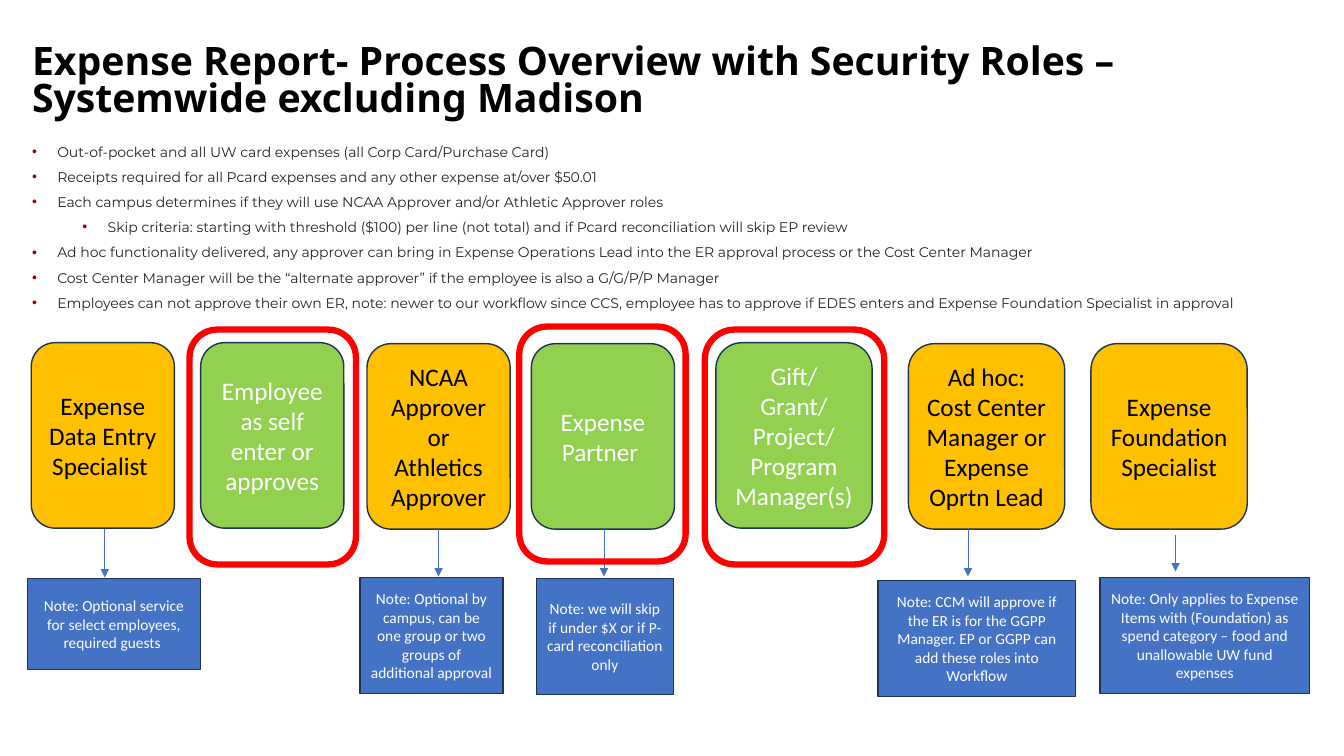
from lxml import etree
from pptx import Presentation
from pptx.dml.color import RGBColor
from pptx.enum.shapes import MSO_CONNECTOR, MSO_SHAPE
from pptx.enum.text import MSO_ANCHOR, PP_ALIGN
from pptx.oxml.ns import qn
from pptx.util import Pt

PX = 9144  # 100 px to the inch
ROUNDED, RECT = MSO_SHAPE.ROUNDED_RECTANGLE, MSO_SHAPE.RECTANGLE
STRAIGHT = MSO_CONNECTOR.STRAIGHT
CENTER, LEFT = PP_ALIGN.CENTER, PP_ALIGN.LEFT
MIDDLE, TOP = MSO_ANCHOR.MIDDLE, MSO_ANCHOR.TOP
AMBER, GREEN, BLUE, NAVY = "FFC000", "92D050", "4472C4", "1E3256"
BLACK, WHITE, RED = "000000", "FFFFFF", "FF0000"

prs = Presentation()
prs.slide_width, prs.slide_height = 1333 * PX, 750 * PX
slide = prs.slides.add_slide(prs.slide_layouts[6])


def color(hex_code):
    return RGBColor.from_string(hex_code)


def write(shape, lines, *, size, font="Calibri", ink=BLACK, bold=False,
          align=CENTER, anchor=MIDDLE, spacing=None, before=0, bullet=None):
    """Fill a shape with (level, text) lines; levels set the bullet indent."""
    frame = shape.text_frame
    frame.word_wrap = True
    frame.vertical_anchor = anchor
    for number, (level, text) in enumerate(lines):
        paragraph = frame.add_paragraph() if number else frame.paragraphs[0]
        paragraph.text = text
        paragraph.alignment = align
        paragraph.level = level
        if spacing:
            paragraph.line_spacing = spacing
        if before and number:
            paragraph.space_before = Pt(before)
        if bullet:
            props = paragraph._p.get_or_add_pPr()
            props.set("marL", str((25 + 50 * level) * PX))
            props.set("indent", str(-25 * PX))
            tint = etree.SubElement(props, qn("a:buClr"))
            etree.SubElement(tint, qn("a:srgbClr"), val=bullet)
            etree.SubElement(props, qn("a:buFont"), typeface="Arial")
            etree.SubElement(props, qn("a:buChar"), char="•")
        for run in paragraph.runs:
            run.font.size, run.font.name, run.font.bold = Pt(size), font, bold
            run.font.color.rgb = color(ink)


def add_box(kind, left, top, width, height, fill, line, weight):
    box = slide.shapes.add_shape(kind, left * PX, top * PX, width * PX, height * PX)
    box.shadow.inherit = False
    if fill:
        box.fill.solid()
        box.fill.fore_color.rgb = color(fill)
    else:
        box.fill.background()
    box.line.color.rgb = color(line)
    box.line.width = Pt(weight)
    return box


# Policy bullets
policies = [
    (0, "Out-of-pocket and all UW card expenses (all Corp Card/Purchase Card)"),
    (0, "Receipts required for all Pcard expenses and any other expense at/over $50.01"),
    (0, "Each campus determines if they will use NCAA Approver and/or Athletic Approver roles"),
    (1, "Skip criteria: starting with threshold ($100) per line (not total) and if Pcard "
        "reconciliation will skip EP review"),
    (0, "Ad hoc functionality delivered, any approver can bring in Expense Operations Lead "
        "into the ER approval process or the Cost Center Manager"),
    (0, "Cost Center Manager will be the “alternate approver” if the employee is also a "
        "G/G/P/P Manager"),
    (0, "Employees can not approve their own ER, note: newer to our workflow since CCS, "
        "employee has to approve if EDES enters and Expense Foundation Specialist in approval"),
]
policy_box = slide.shapes.add_textbox(22 * PX, 137 * PX, 1244 * PX, 483 * PX)
write(policy_box, policies, size=10, font="Montserrat", ink="212529",
      align=LEFT, anchor=TOP, before=6, bullet="990000")

# Title
title = slide.shapes.add_textbox(22 * PX, 41 * PX, 1264 * PX, 83 * PX)
write(title, [(0, "Expense Report- Process Overview with Security Roles – "
                  "Systemwide excluding Madison")],
      size=28, font="Noto Sans", bold=True, align=LEFT, spacing=0.79)

# Approval roles: left, top, width, fill, text colour, lines
roles = [
    (31, 340, 142, AMBER, BLACK, ["Expense Data Entry Specialist "]),
    (199, 340, 142, GREEN, WHITE, ["Employee as self enter or approves"]),
    (364, 341, 142, AMBER, BLACK, ["NCAA Approver or Athletics Approver"]),
    (527, 341, 142, GREEN, WHITE, ["Expense Partner "]),
    (710, 340, 155, GREEN, WHITE, ["Gift/\vGrant/Project/ Program Manager(s)"]),
    (901, 341, 155, AMBER, BLACK, ["Ad hoc: Cost Center Manager or", "Expense Oprtn Lead"]),
    (1082, 341, 155, AMBER, BLACK, ["Expense Foundation Specialist"]),
]
for left, top, width, fill, ink, lines in roles:
    role = add_box(ROUNDED, left, top, width, 184, fill, NAVY, 1)
    write(role, [(0, line) for line in lines], size=18, ink=ink)

# Notes under the roles: left, top, width, height, text
notes = [
    (27, 574, 172, 90, "Note: Optional service for select employees, required guests "),
    (357, 573, 142, 115, "Note: Optional by campus, can be one group or two groups of "
                         "additional approval"),
    (532, 574, 136, 115, "Note: we will skip if under $X or if P-card reconciliation only"),
    (871, 576, 196, 115, "Note: CCM will approve if the ER is for the GGPP Manager. "
                         "EP or GGPP can add these roles into Workflow"),
    (1091, 573, 208, 115, "Note: Only applies to Expense Items with (Foundation) as spend "
                          "category – food and unallowable UW fund expenses"),
]
for left, top, width, height, text in notes:
    note = add_box(RECT, left, top, width, height, BLUE, NAVY, 1)
    write(note, [(0, text)], size=11, ink=WHITE)

# Arrows from role to note: x, start, end
for x, start, end in [(104, 525, 573), (435, 525, 572), (599, 524, 572),
                      (960, 524, 572), (1166, 531, 567)]:
    arrow = slide.shapes.add_connector(STRAIGHT, x * PX, start * PX, x * PX, end * PX)
    arrow.line.color.rgb = color(BLUE)
    arrow.line.width = Pt(0.5)
    etree.SubElement(arrow.line._get_or_add_ln(), qn("a:tailEnd"), type="triangle")
    etree.SubElement(arrow._element.spPr, qn("a:effectLst"))

# Red frames around the green roles
for left, top, width in [(699, 327, 178), (515, 324, 165), (188, 327, 165)]:
    add_box(ROUNDED, left, top, width, 233, None, RED, 4.5)

prs.save("out.pptx")
